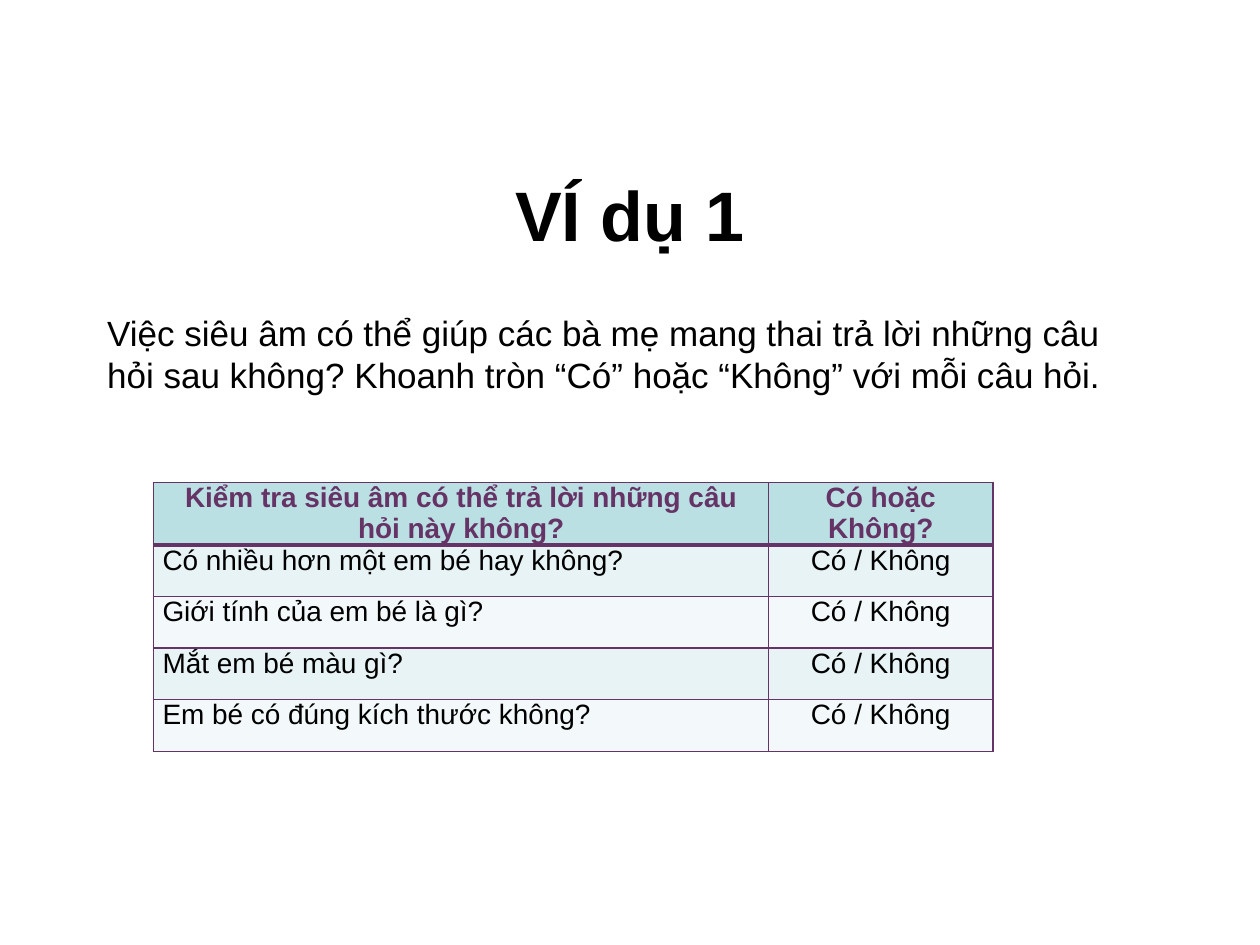
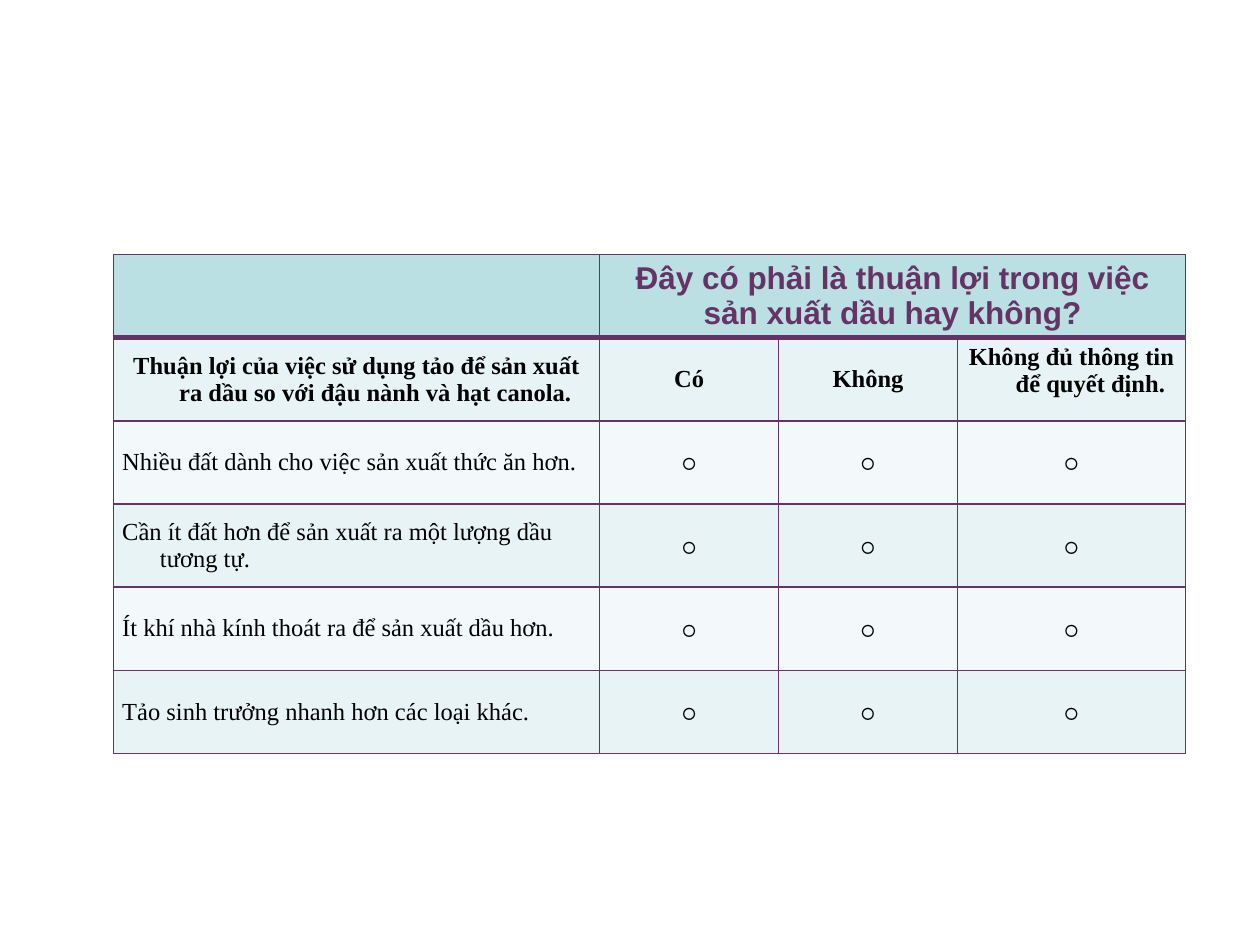
import pptx
import pptx.dml.color
import pptx.enum.text
import pptx.oxml.ns
import pptx.util
from lxml import etree

Inches = pptx.util.Inches
Pt = pptx.util.Pt
RGBColor = pptx.dml.color.RGBColor
CENTER = pptx.enum.text.PP_ALIGN.CENTER
LEFT = pptx.enum.text.PP_ALIGN.LEFT
TOP = pptx.enum.text.MSO_ANCHOR.TOP
MIDDLE = pptx.enum.text.MSO_ANCHOR.MIDDLE
BOTTOM = pptx.enum.text.MSO_ANCHOR.BOTTOM

BLACK = RGBColor(0x00, 0x00, 0x00)
PLUM = RGBColor(0x66, 0x33, 0x66)
HEADER_TEAL = RGBColor(0xBB, 0xE0, 0xE3)
BANDS = (RGBColor(0xE7, 0xF3, 0xF4), RGBColor(0xF3, 0xF9, 0xFA))

SANS = "Arial"
SERIF = "Times New Roman"
SYMBOL = "DejaVu Sans Mono"

CELL_INSETS = (0.07, 0)
CIRCLE = "⃝"


def write_text(frame, text, size, font=SANS, color=BLACK, bold=False,
               align=LEFT, after=0, hanging=0):
    """Fill the frame's first paragraph, with no bullet and an optional hanging indent."""
    paragraph = frame.paragraphs[0]
    properties = paragraph._p.get_or_add_pPr()
    properties.set("marL", str(Inches(hanging)))
    properties.set("indent", str(-Inches(hanging)))
    etree.SubElement(properties, pptx.oxml.ns.qn("a:buNone"))
    paragraph.alignment = align
    paragraph.space_before = Pt(0)
    paragraph.space_after = Pt(after)
    run = paragraph.add_run()
    run.text = text
    run.font.name = font
    run.font.size = Pt(size)
    run.font.bold = bold
    run.font.color.rgb = color


def place_placeholder(placeholder, left, top, width, height, anchor):
    placeholder.left, placeholder.top = Inches(left), Inches(top)
    placeholder.width, placeholder.height = Inches(width), Inches(height)
    placeholder.text_frame.vertical_anchor = anchor
    placeholder.text_frame.word_wrap = True


def set_borders(cell, top=1, bottom=1):
    properties = cell._tc.get_or_add_tcPr()
    for side, points in (("L", 1), ("R", 1), ("T", top), ("B", bottom)):
        line = etree.SubElement(properties, pptx.oxml.ns.qn(f"a:ln{side}"), w=str(Pt(points)))
        fill = etree.SubElement(line, pptx.oxml.ns.qn("a:solidFill"))
        etree.SubElement(fill, pptx.oxml.ns.qn("a:srgbClr"), val=str(PLUM))


def add_banded_table(slide, left, top, columns, row_count, row_height):
    """Add an empty table with a teal header, a thick rule below it and banded rows."""
    table = slide.shapes.add_table(
        row_count, len(columns), Inches(left), Inches(top),
        Inches(sum(columns)), Inches(row_height * row_count)).table
    table.horz_banding = False
    for column, width in zip(table.columns, columns):
        column.width = Inches(width)
    for index, row in enumerate(table.rows):
        row.height = Inches(row_height)
        for cell in row.cells:
            set_borders(cell, top=3 if index == 1 else 1, bottom=3 if index == 0 else 1)
            cell.fill.solid()
            cell.fill.fore_color.rgb = BANDS[(index - 1) % 2] if index else HEADER_TEAL
    return table


def fill_cell(cell, text, size, insets=CELL_INSETS, anchor=TOP, **text_format):
    side, edge = insets
    cell.margin_left = cell.margin_right = Inches(side)
    cell.margin_top = cell.margin_bottom = Inches(edge)
    cell.vertical_anchor = anchor
    write_text(cell.text_frame, text, size, **text_format)


def add_ultrasound_slide(deck):
    slide = deck.slides.add_slide(deck.slide_layouts[1])
    title = slide.shapes.title
    place_placeholder(title, 0.75, 0.83, 8.5, 1.25, BOTTOM)
    write_text(title.text_frame, "VÍ dụ 1", 40, bold=True, align=CENTER)
    question = slide.placeholders[1]
    place_placeholder(question, 0.75, 2.42, 8.5, 4.83, TOP)
    write_text(question.text_frame,
               "Việc siêu âm có thể giúp các bà mẹ mang thai trả lời những câu hỏi sau không? "
               "Khoanh tròn “Có” hoặc “Không” với mỗi câu hỏi.", 20)

    headings = ("Kiểm tra siêu âm có thể trả lời những câu hỏi này không?", "Có hoặc Không?")
    questions = (
        "Có nhiều hơn một em bé hay không?",
        "Giới tính của em bé là gì?",
        "Mắt em bé màu gì?",
        "Em bé có đúng kích thước không?",
    )
    table = add_banded_table(slide, 1.22, 3.83, (4.88, 1.78), len(questions) + 1, 0.41)
    for column, heading in enumerate(headings):
        fill_cell(table.cell(0, column), heading, 16, color=PLUM, bold=True,
                  align=CENTER, after=11)
    for row, text in enumerate(questions, start=1):
        fill_cell(table.cell(row, 0), text, 16, after=11)
        fill_cell(table.cell(row, 1), "Có / Không", 16, align=CENTER, after=11)


def add_algae_slide(deck):
    slide = deck.slides.add_slide(deck.slide_layouts[6])
    advantages = (
        "Nhiều đất dành cho việc sản xuất thức ăn hơn.",
        "Cần ít đất hơn để sản xuất ra một lượng dầu tương tự.",
        "Ít khí nhà kính thoát ra để sản xuất dầu hơn.",
        "Tảo sinh trưởng nhanh hơn các loại khác.",
    )
    headings = (
        "Thuận lợi của việc sử dụng tảo để sản xuất ra dầu so với đậu nành và hạt canola.",
        "Có",
        "Không",
        "Không đủ thông tin để quyết định.",
    )
    table = add_banded_table(slide, 0.9, 2.02, (3.86, 1.42, 1.42, 1.81),
                             len(advantages) + 2, 0.66)
    table.cell(0, 1).merge(table.cell(0, 3))
    fill_cell(table.cell(0, 1), "Đây có phải là thuận lợi trong việc sản xuất dầu hay không?",
              18, insets=(0.1, 0.05), color=PLUM, bold=True, align=CENTER)

    last = len(headings) - 1
    for column, heading in enumerate(headings):
        fill_cell(table.cell(1, column), heading, 14, font=SERIF, bold=True,
                  align=CENTER, hanging=0.3,
                  insets=(0.05, 0.05) if column == last else CELL_INSETS,
                  anchor=TOP if column == last else MIDDLE)
    for row, advantage in enumerate(advantages, start=2):
        fill_cell(table.cell(row, 0), advantage, 14, font=SERIF, anchor=MIDDLE, hanging=0.3)
        for column in range(1, len(headings)):
            fill_cell(table.cell(row, column), CIRCLE, 14, font=SYMBOL, anchor=MIDDLE,
                      align=CENTER, hanging=0.3)


def main():
    deck = pptx.Presentation()
    deck.slide_width, deck.slide_height = Inches(10), Inches(7.5)
    add_ultrasound_slide(deck)
    add_algae_slide(deck)
    deck.save("out.pptx")


if __name__ == "__main__":
    main()
